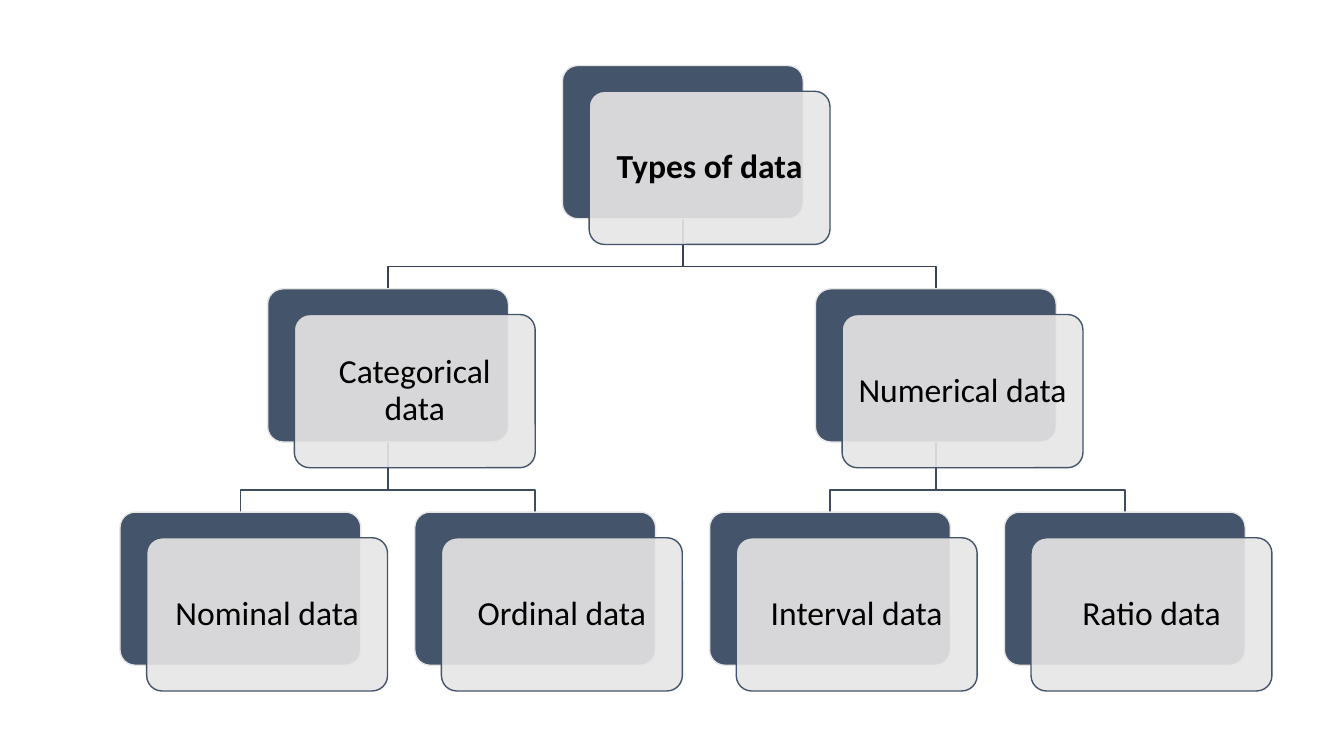
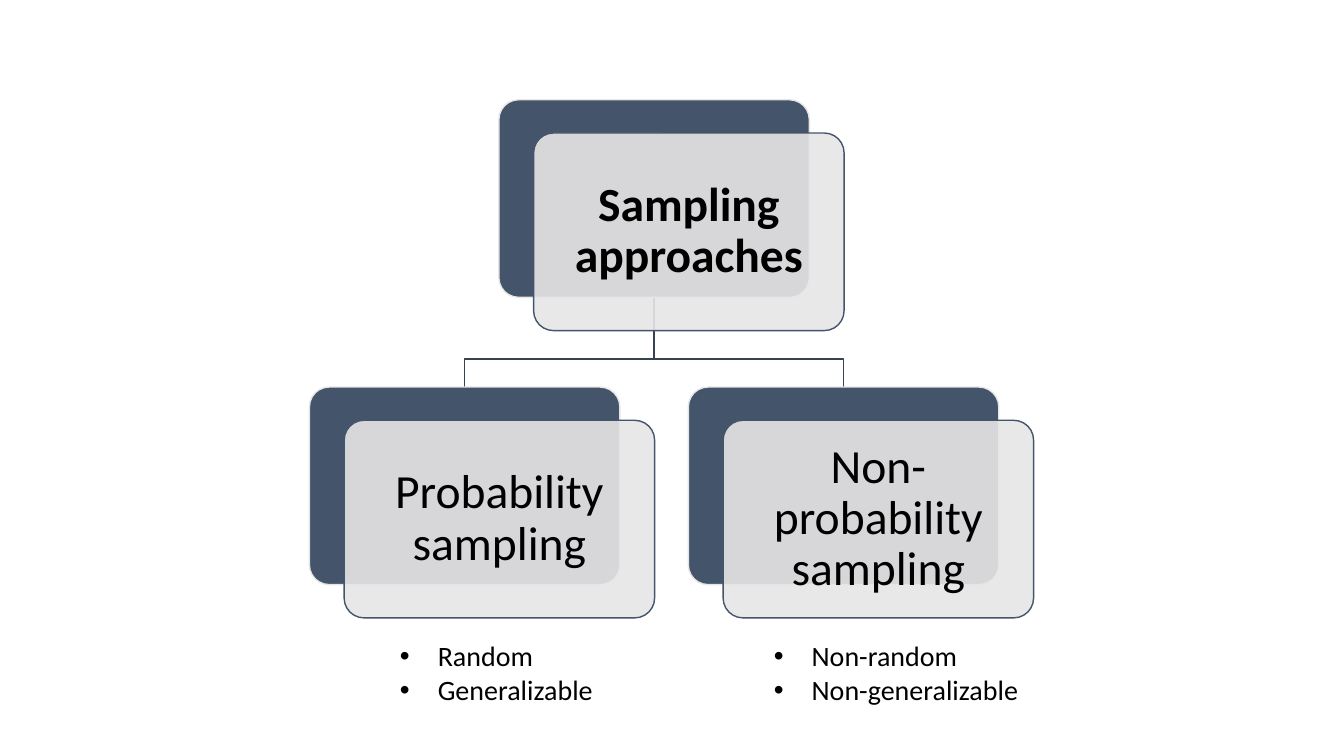
from dataclasses import dataclass

from lxml import etree
from pptx import Presentation
from pptx.dml.color import RGBColor
from pptx.enum.shapes import MSO_SHAPE
from pptx.enum.text import MSO_ANCHOR, MSO_AUTO_SIZE, PP_ALIGN
from pptx.oxml.ns import qn
from pptx.util import Pt

PX = 4572
ROUNDED = MSO_SHAPE.ROUNDED_RECTANGLE
MIDDLE, TOP = MSO_ANCHOR.MIDDLE, MSO_ANCHOR.TOP
CENTER = PP_ALIGN.CENTER
GROW = MSO_AUTO_SIZE.SHAPE_TO_FIT_TEXT

SLATE = RGBColor(0x44, 0x54, 0x6A)
MIST = RGBColor(0xE7, 0xE6, 0xE6)
BLACK = RGBColor(0x00, 0x00, 0x00)
BRANCH_COLORS = {1: RGBColor(0x36, 0x43, 0x55), 2: RGBColor(0x3E, 0x4C, 0x60)}


@dataclass
class TreeLayout:
    width: int
    height: int
    shift_x: int
    shift_y: int
    top: int
    row_pitch: int
    text_size: int
    inset: int

    def row_top(self, row):
        return self.top + row * self.row_pitch


@dataclass
class Node:
    label: str
    left: int
    row: int
    parent: "Node" = None


def apply(target, values):
    for name, value in values.items():
        setattr(target, name, value)


class Deck:
    font = "Calibri"
    line_width = Pt(1)
    corner = 0.1
    bullet_indent = 75

    def __init__(self, width, height):
        self.presentation = Presentation()
        apply(self.presentation, {"slide_width": width * PX, "slide_height": height * PX})
        self.page = None

    def add_page(self):
        self.page = self.presentation.slides.add_slide(self.presentation.slide_layouts[6])

    def outline(self, shape, color):
        shape.shadow.inherit = False
        shape.line.color.rgb = color
        shape.line.width = self.line_width

    def style_text(self, para, size, bold=False):
        apply(para.font, {"name": self.font, "size": Pt(size), "bold": bold})
        para.font.color.rgb = BLACK

    def panel(self, left, top, layout, fill, line, opacity=100):
        box = self.page.shapes.add_shape(
            ROUNDED, left * PX, top * PX, layout.width * PX, layout.height * PX)
        box.adjustments[0] = self.corner
        box.fill.solid()
        box.fill.fore_color.rgb = fill
        self.outline(box, line)
        if opacity < 100:
            color = box.fill._xPr.find(qn("a:solidFill"))[0]
            etree.SubElement(color, qn("a:alpha"), val=str(opacity * 1000))
        return box

    def card(self, node, layout):
        top = layout.row_top(node.row)
        self.panel(node.left, top, layout, SLATE, MIST)
        front = self.panel(node.left + layout.shift_x, top + layout.shift_y,
                           layout, MIST, SLATE, opacity=90)
        frame = front.text_frame
        sides = ("left", "top", "right", "bottom")
        apply(frame, {f"margin_{side}": layout.inset * PX for side in sides})
        apply(frame, {"word_wrap": True, "vertical_anchor": MIDDLE, "text": node.label})
        para = frame.paragraphs[0]
        apply(para, {"alignment": CENTER, "line_spacing": 0.9})
        self.style_text(para, layout.text_size, bold=node.parent is None)

    def branch(self, node, layout):
        half = layout.width // 2
        start_x, end_x = node.parent.left + half, node.left + half
        start_y = layout.row_top(node.parent.row) + layout.height
        end_y = layout.row_top(node.row)
        bend_y = (start_y + layout.shift_y + end_y) // 2
        builder = self.page.shapes.build_freeform(start_x, start_y, scale=PX)
        builder.add_line_segments(
            [(start_x, bend_y), (end_x, bend_y), (end_x, end_y)], close=False)
        line = builder.convert_to_shape()
        line.fill.background()
        self.outline(line, BRANCH_COLORS[node.row])

    def tree(self, nodes, layout):
        for node in nodes:
            if node.parent:
                self.branch(node, layout)
        for node in nodes:
            self.card(node, layout)

    def bullets(self, left, top, width, height, items, size=20):
        box = self.page.shapes.add_textbox(left * PX, top * PX, width * PX, height * PX)
        frame = box.text_frame
        apply(frame, {"word_wrap": True, "auto_size": GROW,
                      "vertical_anchor": TOP, "text": "\n".join(items)})
        indent = self.bullet_indent * PX
        for para in frame.paragraphs:
            properties = para._p.get_or_add_pPr()
            properties.set("marL", str(indent))
            properties.set("indent", str(-indent))
            etree.SubElement(properties, qn("a:buFont"), typeface="Arial")
            etree.SubElement(properties, qn("a:buChar"), char="•")
            self.style_text(para, size)


def data_types(deck):
    layout = TreeLayout(width=478, height=304, shift_x=53, shift_y=51,
                        top=130, row_pitch=443, text_size=24, inset=20)
    root = Node("Types of data", 1116, 0)
    categorical = Node("Categorical data", 531, 1, root)
    numerical = Node("Numerical data", 1618, 1, root)
    leaves = [("Nominal data", categorical), ("Ordinal data", categorical),
              ("Interval data", numerical), ("Ratio data", numerical)]
    nodes = [root, categorical, numerical]
    nodes += [Node(label, 238 + 585 * column, 2, parent)
              for column, (label, parent) in enumerate(leaves)]
    deck.add_page()
    deck.tree(nodes, layout)


def sampling_approaches(deck):
    layout = TreeLayout(width=616, height=392, shift_x=69, shift_y=66,
                        top=198, row_pitch=570, text_size=34, inset=28)
    root = Node("Sampling approaches", 990, 0)
    nodes = [root, Node("Probability sampling", 614, 1, root),
             Node("Non-probability sampling", 1366, 1, root)]
    deck.add_page()
    deck.tree(nodes, layout)
    deck.bullets(774, 1258, 444, 154, ["Random", "Generalizable"])
    deck.bullets(1516, 1258, 592, 154, ["Non-random", "Non-generalizable"])


def main():
    deck = Deck(2667, 1500)
    data_types(deck)
    sampling_approaches(deck)
    deck.presentation.save("out.pptx")


if __name__ == "__main__":
    main()
